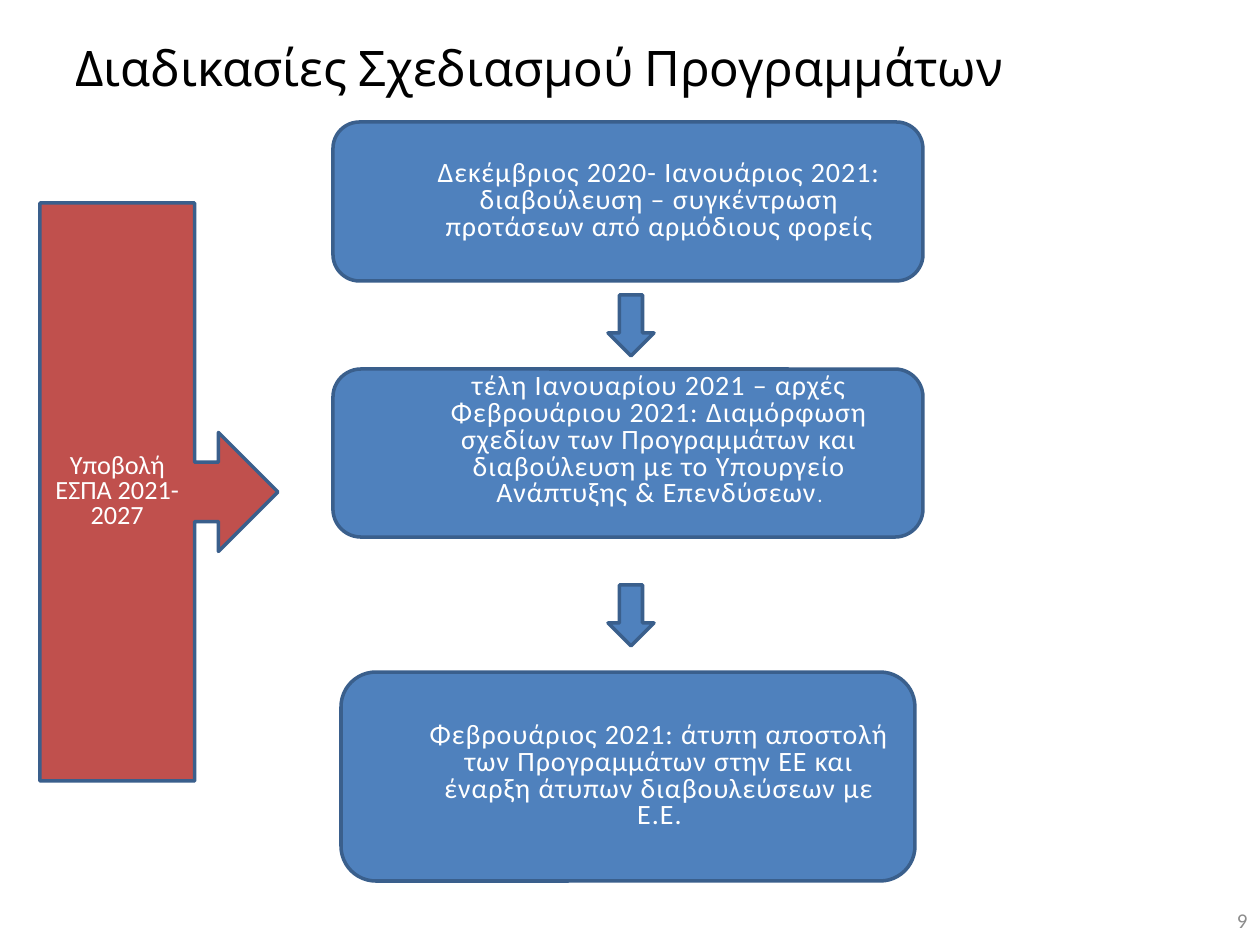
from pptx import Presentation
from pptx.dml.color import RGBColor
from pptx.enum import shapes, text
from pptx.util import Pt

PX = 914400 / 126
BLUE = RGBColor(0x4F, 0x81, 0xBD)
RED = RGBColor(0xC0, 0x50, 0x4D)
OUTLINE = RGBColor(0x3A, 0x5F, 0x8C)
WHITE = RGBColor(0xFF, 0xFF, 0xFF)
BLACK = RGBColor(0, 0, 0)
GREY = RGBColor(0x8C, 0x8C, 0x8C)

TITLE = "Διαδικασίες Σχεδιασμού Προγραμμάτων"
PAGE_NUMBER = "9"
CENTRE_X = 628
# top, width, height, bottom inset, runs of (wording, points)
STEPS = [
    (122, 590, 159, 6, [
        ("Δεκέμβριος 2020- Ιανουάριος 2021: διαβούλευση – συγκέντρωση "
         "προτάσεων από αρμόδιους φορείς", 16)]),
    (369, 590, 168, 30, [
        ("τέλη Ιανουαρίου 2021 – αρχές Φεβρουάριου 2021: Διαμόρφωση σχεδίων "
         "των Προγραμμάτων και διαβούλευση με το Υπουργείο Ανάπτυξης & "
         "Επενδύσεων", 16), (".", 12)]),
    (672, 574, 209, 6, [
        ("Φεβρουάριος 2021: άτυπη αποστολή των Προγραμμάτων στην ΕΕ και "
         "έναρξη άτυπων διαβουλεύσεων με Ε.Ε.", 16)]),
]
ARROW_TOPS = [295, 585]
ARROW_LEFT, ARROW_WIDTH, ARROW_HEIGHT = 608, 46, 61
CALLOUT = (40, 203, 238, 578)
CALLOUT_RUNS = [("Υποβολή ΕΣΠΑ 2021-2027", 15)]


def px(*lengths):
    return [round(length * PX) for length in lengths]


def add_run(paragraph, wording, size, color, font="Calibri", spacing=0):
    run = paragraph.add_run()
    run.text = wording
    run.font.size = Pt(size)
    run.font.name = font
    run.font.color.rgb = color
    if spacing:
        run.font._element.set("spc", str(spacing))


def add_block(slide, kind, box, fill):
    shape = slide.shapes.add_shape(kind, *px(*box))
    shape.shadow.inherit = False
    shape.fill.solid()
    shape.fill.fore_color.rgb = fill
    shape.line.color.rgb = OUTLINE
    shape.line.width = Pt(2)
    return shape


def fill_block(shape, runs, spacing=0, indent=0):
    frame = shape.text_frame
    frame.word_wrap = True
    frame.vertical_anchor = text.MSO_ANCHOR.MIDDLE
    paragraph = frame.paragraphs[0]
    paragraph.alignment = text.PP_ALIGN.CENTER
    paragraph.line_spacing = 0.8
    if indent:
        paragraph.level = 1
        properties = paragraph._p.get_or_add_pPr()
        properties.set("marL", str(px(indent)[0]))
        properties.set("indent", "0")
    for wording, size in runs:
        add_run(paragraph, wording, size, WHITE, spacing=spacing)


def main():
    presentation = Presentation()
    presentation.slide_width, presentation.slide_height = px(1260, 945)
    slide = presentation.slides.add_slide(presentation.slide_layouts[5])

    title = slide.shapes.title
    title.left, title.top, title.width, title.height = px(63, 16, 1134, 102)
    title.text_frame.vertical_anchor = text.MSO_ANCHOR.MIDDLE
    paragraph = title.text_frame.paragraphs[0]
    paragraph.alignment = text.PP_ALIGN.LEFT
    add_run(paragraph, TITLE, 28, BLACK, font="Cabin")

    number = slide.shapes.add_textbox(*px(1176, 895, 84, 50))
    number.text_frame.word_wrap = True
    number.text_frame.vertical_anchor = text.MSO_ANCHOR.MIDDLE
    paragraph = number.text_frame.paragraphs[0]
    paragraph.alignment = text.PP_ALIGN.RIGHT
    add_run(paragraph, PAGE_NUMBER, 12, GREY)

    kinds = shapes.MSO_SHAPE
    for top, width, height, bottom_inset, runs in STEPS:
        box = (CENTRE_X - width / 2, top, width, height)
        step = add_block(slide, kinds.ROUNDED_RECTANGLE, box, BLUE)
        step.text_frame.margin_bottom = px(bottom_inset)[0]
        fill_block(step, runs, spacing=60, indent=63)

    for top in ARROW_TOPS:
        box = (ARROW_LEFT, top, ARROW_WIDTH, ARROW_HEIGHT)
        add_block(slide, kinds.DOWN_ARROW, box, BLUE)

    callout = add_block(slide, kinds.RIGHT_ARROW_CALLOUT, CALLOUT, RED)
    fill_block(callout, CALLOUT_RUNS)

    presentation.save("out.pptx")


if __name__ == "__main__":
    main()
